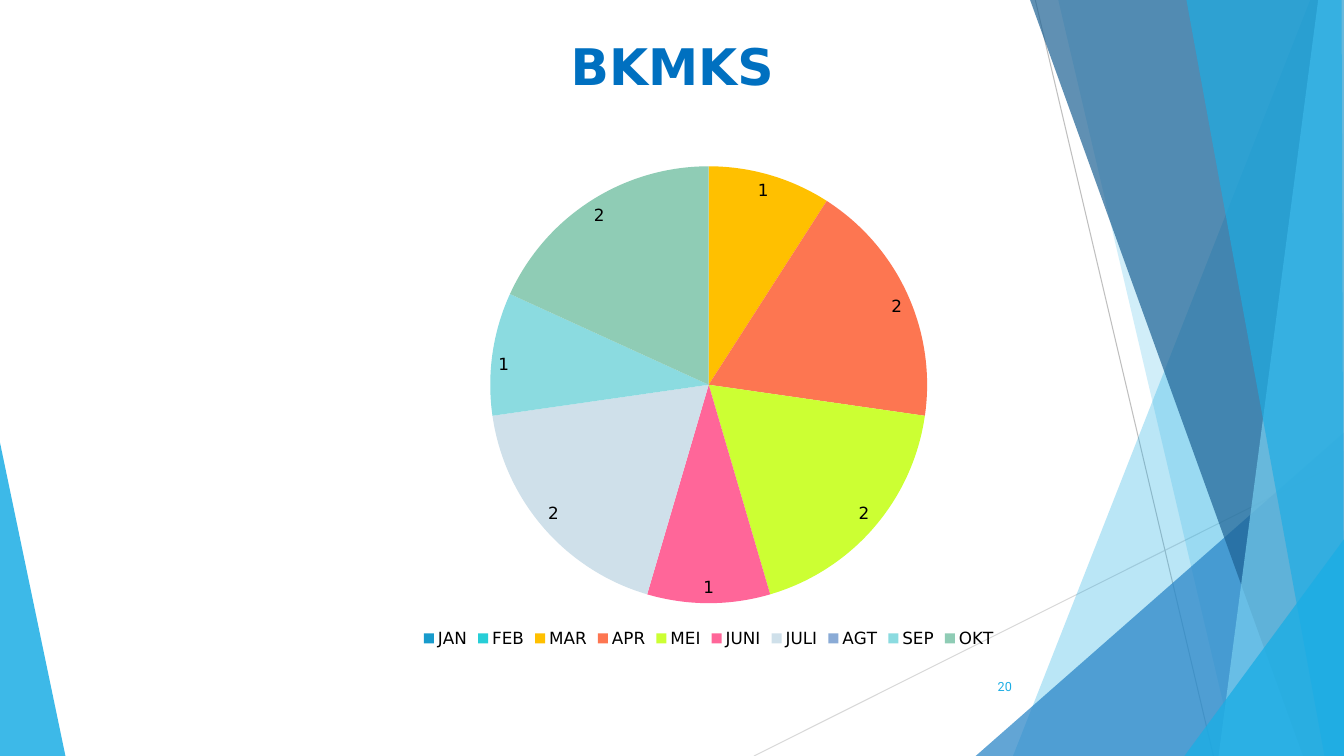
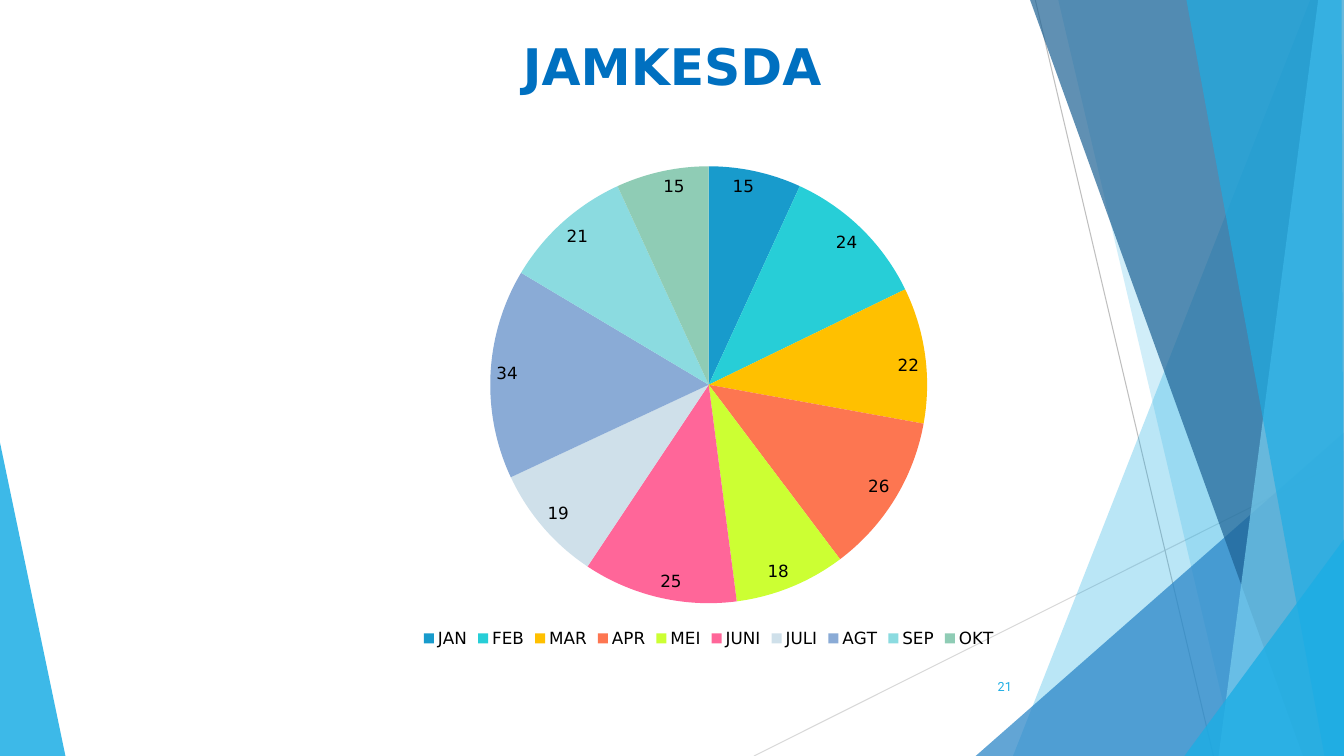
from lxml import etree
from pptx import Presentation
from pptx import util as u
from pptx.chart import data as chart_data
from pptx.dml.color import RGBColor
from pptx.enum import chart as charts, shapes, text
from pptx.oxml import ns

WIDTH, HEIGHT = 33.87, 19.05

COLORS = {
    "sky": "1CADE4", "blue": "2683C6", "navy": "1D6294", "pale": "77CEEF",
    "title": "0070C0", "black": "000000",
    "line_light": "D9D9D9", "line_dark": "BFBFBF",
}

# Each month with the colour of its slice
MONTHS = {
    "JAN": "189BCC", "FEB": "27CED7", "MAR": "FFC000", "APR": "FD7651",
    "MEI": "CCFF33", "JUNI": "FF6699", "JULI": "CFE0EA", "AGT": "8AABD6",
    "SEP": "8BDBE0", "OKT": "8FCCB5",
}

# Background lines: colour, start, end
LINES = [
    ("line_light", (19, HEIGHT), (WIDTH, 11.61)),
    ("line_dark", (26.09, 0), (30.58, HEIGHT)),
]

# Background facets from back to front: colour, opacity in percent, corners
LEFT_FACET = ("sky", 85, [(0, 11.15), (1.65, HEIGHT), (0, HEIGHT)])
BOTTOM_RIGHT, TOP_RIGHT = (WIDTH, HEIGHT), (WIDTH, 0)
RIGHT_FACETS = [
    ("sky", 30, [(33.02, 0), (25.53, HEIGHT), BOTTOM_RIGHT, TOP_RIGHT]),
    ("sky", 20, [(26.67, 0), (31.14, HEIGHT), BOTTOM_RIGHT, TOP_RIGHT]),
    ("blue", 72, [(24.59, HEIGHT), (WIDTH, 10.9), BOTTOM_RIGHT]),
    ("navy", 70, [(25.96, 0), (32.84, HEIGHT), BOTTOM_RIGHT, TOP_RIGHT]),
    ("pale", 70, [(33.22, 0), (30.71, HEIGHT), BOTTOM_RIGHT, TOP_RIGHT]),
    ("sky", 65, [(29.9, 0), (33.38, HEIGHT), BOTTOM_RIGHT, (33.81, 0)]),
    ("sky", 80, [(29.85, HEIGHT), (WIDTH, 13.59), BOTTOM_RIGHT]),
]

# Title, page number, cases per month
PAGES = [
    ("BKMKS", 20, [0, 0, 1, 2, 2, 1, 2, 0, 1, 2]),
    ("JAMKESDA", 21, [15, 24, 22, 26, 18, 25, 19, 34, 21, 15]),
]


class Deck:
    """Holds the style and the current slide."""
    font, number_font = "DejaVu Sans", "Roboto"

    def __init__(self):
        self.presentation = Presentation()
        self.presentation.slide_width = u.Cm(WIDTH)
        self.presentation.slide_height = u.Cm(HEIGHT)
        self.slide = None

    def add_slide(self):
        self.slide = self.presentation.slides.add_slide(self.presentation.slide_layouts[6])
        self.add_facet(*LEFT_FACET)
        for line in LINES:
            self.add_line(*line)
        for facet in RIGHT_FACETS:
            self.add_facet(*facet)

    def add_line(self, color, start, end):
        line = self.slide.shapes.add_connector(
            shapes.MSO_CONNECTOR.STRAIGHT, *map(u.Cm, start + end))
        line.line.color.rgb = RGBColor.from_string(COLORS[color])
        line.line.width = u.Pt(0.75)
        etree.SubElement(line._element.spPr, ns.qn("a:effectLst"))

    def add_facet(self, color, opacity, corners):
        points = [(u.Cm(x), u.Cm(y)) for x, y in corners]
        builder = self.slide.shapes.build_freeform(*points[0])
        builder.add_line_segments(points[1:], close=True)
        shape = builder.convert_to_shape()
        shape.shadow.inherit = False
        shape.line.fill.background()
        shape.fill.solid()
        shape.fill.fore_color.rgb = RGBColor.from_string(COLORS[color])
        fill_color = shape._element.spPr.find(".//" + ns.qn("a:srgbClr"))
        etree.SubElement(fill_color, ns.qn("a:alpha"), val=str(opacity * 1000))

    def style_font(self, font, size, color, name=font, bold=False):
        font.name, font.size, font.bold = name, u.Pt(size), bold
        font.color.rgb = RGBColor.from_string(COLORS[color])

    def add_text(self, wording, box, align, anchor, **style):
        frame = self.slide.shapes.add_textbox(*map(u.Cm, box)).text_frame
        frame.word_wrap = True
        frame.vertical_anchor = anchor
        paragraph = frame.paragraphs[0]
        paragraph.text = wording
        paragraph.alignment = align
        self.style_font(paragraph.font, **style)

    def add_title(self, wording):
        self.add_text(wording, (1.7, 0.76, 30.48, 3.18), text.PP_ALIGN.CENTER,
                      text.MSO_ANCHOR.TOP, size=36, color="title", bold=True)

    def add_page_number(self, number):
        self.add_text(str(number), (23.85, 16.79, 1.9, 1.02), text.PP_ALIGN.RIGHT,
                      text.MSO_ANCHOR.MIDDLE, size=9, color="sky", name=self.number_font)

    def add_pie(self, values):
        data = chart_data.CategoryChartData()
        data.categories = list(MONTHS)
        data.add_series("Series 1", values)
        box = map(u.Cm, (2.62, 3.84, 30.48, 12.6))
        chart = self.slide.shapes.add_chart(charts.XL_CHART_TYPE.PIE, *box, data).chart
        self.style_font(chart.font, 12, "black")
        chart.has_title = False
        chart.has_legend = True
        chart.legend.position = charts.XL_LEGEND_POSITION.BOTTOM
        chart.legend.include_in_layout = False
        self.style_font(chart.legend.font, 12, "black")
        plot = chart.plots[0]
        plot.vary_by_categories = True
        for index, color in enumerate(MONTHS.values()):
            fill = plot.series[0].points[index].format.fill
            fill.solid()
            fill.fore_color.rgb = RGBColor.from_string(color)
        # Months without cases get no label
        plot.has_data_labels = True
        labels = plot.data_labels
        labels.show_value = True
        labels.number_format = "0;;"
        labels.number_format_is_linked = False
        labels.position = charts.XL_LABEL_POSITION.INSIDE_END
        self.style_font(labels.font, 12, "black")


def main():
    deck = Deck()
    for title, number, values in PAGES:
        deck.add_slide()
        deck.add_title(title)
        deck.add_pie(values)
        deck.add_page_number(number)
    deck.presentation.save("out.pptx")


if __name__ == "__main__":
    main()
